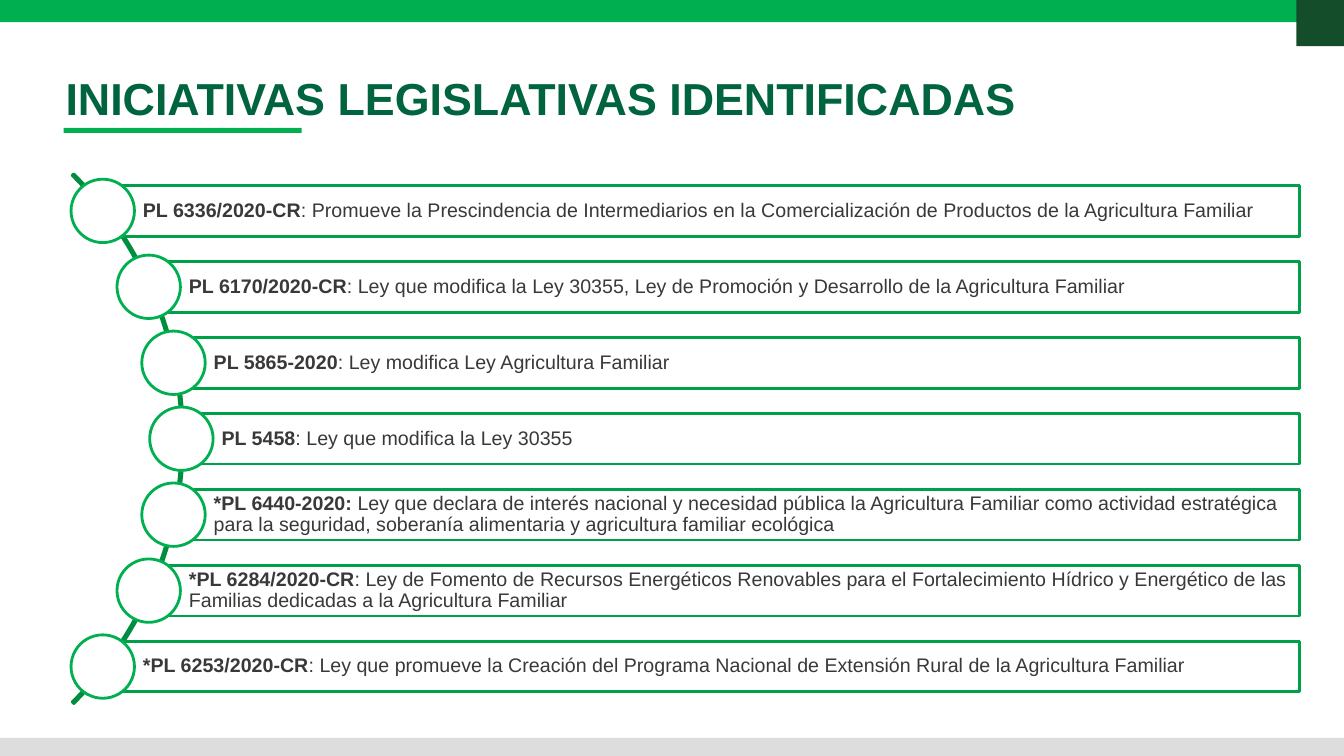
import math
import pptx
import pptx.util
import pptx.dml.color
import pptx.enum.shapes
import pptx.enum.text

Pt = pptx.util.Pt
Shape = pptx.enum.shapes.MSO_SHAPE
Anchor = pptx.enum.text.MSO_ANCHOR
Align = pptx.enum.text.PP_ALIGN
Size = pptx.enum.text.MSO_AUTO_SIZE

WIDE, HIGH = 960, 540
BILLS = [
    ("PL 6336/2020-CR", ": Promueve la Prescindencia de Intermediarios en la Comercialización de Productos de la Agricultura Familiar"),
    ("PL 6170/2020-CR", ": Ley que modifica la Ley 30355, Ley de Promoción y Desarrollo de la Agricultura Familiar"),
    ("PL 5865-2020", ": Ley modifica Ley Agricultura Familiar"),
    ("PL 5458", ": Ley que modifica la Ley 30355"),
    ("*PL 6440-2020: ", "Ley que declara de interés nacional y necesidad pública la Agricultura Familiar como actividad estratégica para la seguridad, soberanía alimentaria y agricultura familiar ecológica"),
    ("*PL 6284/2020-CR", ": Ley de Fomento de Recursos Energéticos Renovables para el Fortalecimiento Hídrico y Energético de las Familias dedicadas a la Agricultura Familiar"),
    ("*PL 6253/2020-CR", ": Ley que promueve la Creación del Programa Nacional de Extensión Rural de la Agricultura Familiar"),
]


class Deck:
    hues = {
        "green": "00B050", "gray": "DDDDDD", "dark": "134D2A", "title": "00643E",
        "arc": "008D40", "edge": "00A049", "white": "FFFFFF", "text": "3A3838",
    }
    face = "Arial"

    def __init__(self):
        self.show = pptx.Presentation()
        self.show.slide_width, self.show.slide_height = Pt(WIDE), Pt(HIGH)
        self.slide = self.show.slides.add_slide(self.show.slide_layouts[5])

    def hue(self, name):
        return pptx.dml.color.RGBColor.from_string(self.hues[name])

    def apply(self, item, form):
        for name, value in form.items():
            setattr(item, name, value)

    def paint(self, fill, name):
        fill.solid()
        fill.fore_color.rgb = self.hue(name)

    def shape(self, kind, left, top, width, height, fill=None, line=None):
        item = self.slide.shapes.add_shape(kind, Pt(left), Pt(top), Pt(width), Pt(height))
        item.shadow.inherit = False
        if fill:
            self.paint(item.fill, fill)
        else:
            item.fill.background()
        if line:
            self.paint(item.line.fill, line)
            item.line.width = Pt(2)
        else:
            item.line.fill.background()
        return item

    def label(self, item, runs, size, tone, frame, lead):
        self.apply(item.text_frame, {"word_wrap": True, "auto_size": Size.NONE, **frame})
        para = item.text_frame.paragraphs[0]
        self.apply(para, {"alignment": Align.LEFT, "line_spacing": lead})
        for words, bold in runs:
            run = para.add_run()
            run.text = words
            self.apply(run.font, {"name": self.face, "size": Pt(size), "bold": bold})
            run.font.color.rgb = self.hue(tone)

    def title(self, words, left, top, width, height):
        item = self.slide.shapes.title
        self.apply(item, {"left": Pt(left), "top": Pt(top), "width": Pt(width), "height": Pt(height)})
        self.paint(item.fill, "white")
        frame = {
            "vertical_anchor": Anchor.TOP, "margin_left": Pt(7.2), "margin_right": Pt(7.2),
            "margin_top": Pt(3.6), "margin_bottom": Pt(3.6),
        }
        self.label(item, [(words, True)], 32, "title", frame, 1.0)

    def arc(self, mid, centre, radius):
        item = self.shape(Shape.BLOCK_ARC, mid - radius, centre - radius,
                          2 * radius, 2 * radius, line="arc")
        for i, value in enumerate((189, 27, 0.003)):
            item.adjustments[i] = value

    def bill(self, left, centre, right, runs):
        tall, disc = 36.2, 45.3
        box = self.shape(Shape.RECTANGLE, left, centre - tall / 2, right - left, tall, "white", "edge")
        frame = {
            "vertical_anchor": Anchor.MIDDLE, "margin_left": Pt(28.7), "margin_right": Pt(2.8),
            "margin_top": Pt(2.8), "margin_bottom": Pt(2.8),
        }
        self.label(box, runs, 14, "text", frame, 0.9)
        self.shape(Shape.OVAL, left - disc / 2, centre - disc / 2, disc, disc, "white", "green")


def main():
    deck = Deck()
    deck.title("INICIATIVAS LEGISLATIVAS IDENTIFICADAS", 39.6, 46.8, 753, 63.4)
    for box, fill in [
        ((0, 0, WIDE, 15.8), "green"),
        ((0, 527, WIDE, 13), "gray"),
        ((926, 0, 34, 33), "dark"),
        ((45.4, 91.4, 170, 3.6), "green"),
    ]:
        deck.shape(Shape.RECTANGLE, *box, fill)

    centre, pitch, curve, peak = 313.4, 54.25, 263.8, 129.6
    deck.arc(-136.4, centre, 267.5)
    for i, (code, words) in enumerate(BILLS):
        rise = (i - (len(BILLS) - 1) / 2) * pitch
        left = peak - curve + math.sqrt(curve ** 2 - rise ** 2)
        deck.bill(left, centre + rise, 928, [(code, True), (words, False)])
    deck.show.save("out.pptx")


if __name__ == "__main__":
    main()
